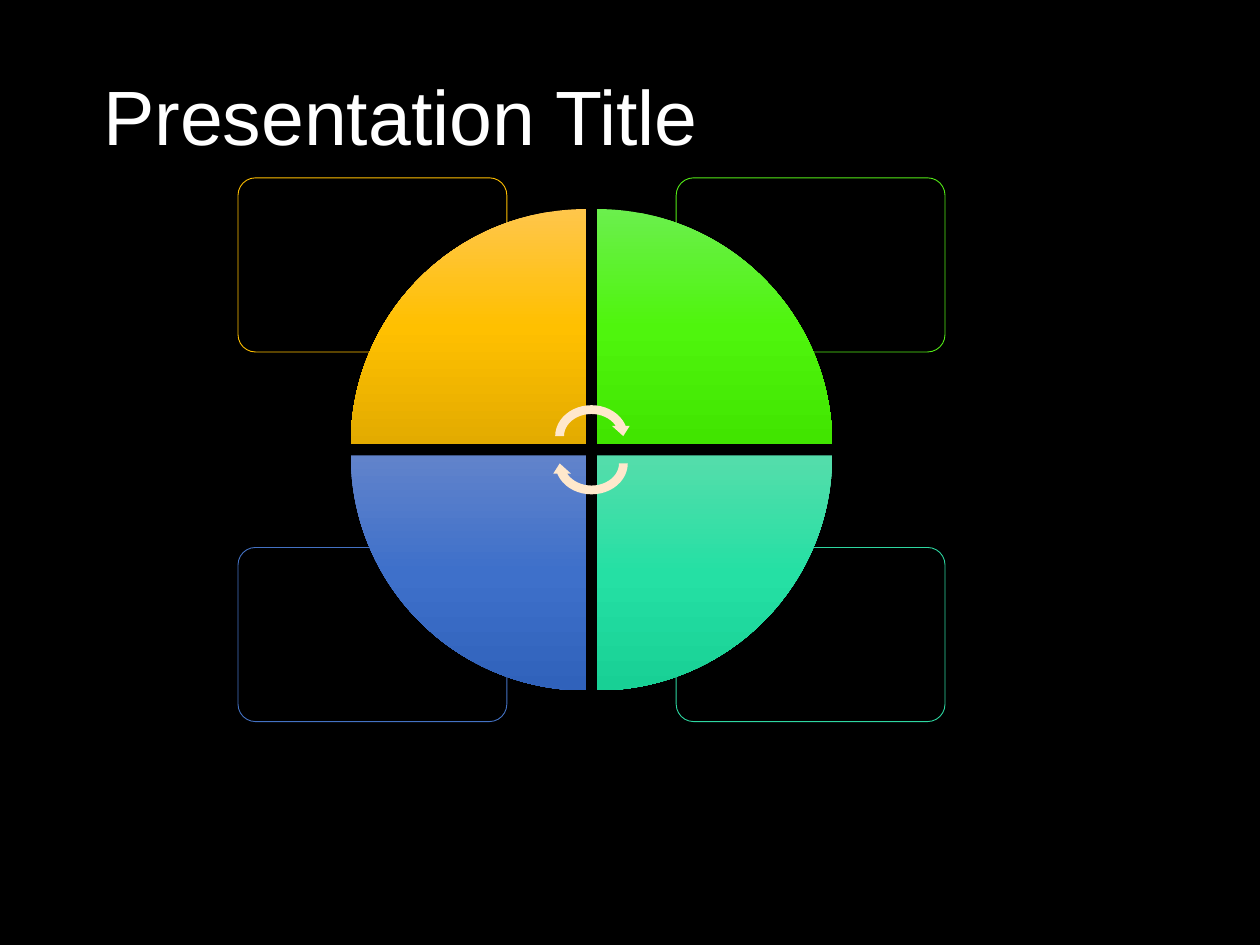
from copy import deepcopy

from lxml import etree
from pptx import Presentation
from pptx.dml.color import RGBColor
from pptx.enum.shapes import MSO_SHAPE
from pptx.enum.text import MSO_ANCHOR
from pptx.oxml.ns import qn
from pptx.util import Pt

ROUNDED = MSO_SHAPE.ROUNDED_RECTANGLE
WEDGE = MSO_SHAPE.PIE_WEDGE
CIRCULAR_ARROW = MSO_SHAPE.CIRCULAR_ARROW
MIDDLE = MSO_ANCHOR.MIDDLE


def color(hex_text):
    return RGBColor.from_string(hex_text)


def add_centered(kind, center_x, center_y, width, height, rotation=0):
    shape = page.shapes.add_shape(
        kind, Pt(center_x - width / 2), Pt(center_y - height / 2), Pt(width), Pt(height))
    shape.rotation = rotation
    shape.shadow.inherit = False
    shape.line.fill.background()
    return shape


deck = Presentation()
deck.slide_width, deck.slide_height = Pt(720), Pt(540)
page = deck.slides.add_slide(deck.slide_layouts[6])
page.background.fill.solid()
page.background.fill.fore_color.rgb = color("000000")

# Title
box = page.shapes.add_textbox(Pt(51.84), Pt(16.56), Pt(622.8), Pt(104.4))
box.text_frame.word_wrap = True
box.text_frame.vertical_anchor = MIDDLE
para = box.text_frame.paragraphs[0]
para.line_spacing = 0.9
span = para.add_run()
span.text = "Presentation Title"
span.font.name = "Arial"
span.font.size = Pt(44)
span.font.color.rgb = color("FFFFFF")

# Quadrants: side, level, rotation, outline, gradient from top to bottom
CENTER_X, CENTER_Y = 338, 257
quadrants = [
    (-1, -1, 0, "FFC000", ("FFC64B", "FFC000", "E3AB00")),
    (1, -1, 90, "53EB17", ("6BEF4D", "4FF50D", "41E500")),
    (1, 1, 180, "2ED7A1", ("55DDAB", "25E0A4", "18D095")),
    (-1, 1, 270, "4472C4", ("6183CB", "3E70CA", "3062BB")),
]

# Outlined cards behind the circle
for side, level, rotation, outline, shades in quadrants:
    card = add_centered(ROUNDED, CENTER_X + side * 125.2, CENTER_Y + level * 105.6, 153.6, 99.5)
    card.adjustments[0] = 0.1
    card.fill.solid()
    card.fill.fore_color.rgb = color("000000")
    fill_color = card.fill._xPr.find(qn("a:solidFill"))[0]
    etree.SubElement(fill_color, qn("a:alpha"), val="90000")
    card.line.color.rgb = color(outline)
    card.line.width = Pt(0.5)

# Four wedges forming the circle
WEDGE_SIZE, GAP = 134.4, 6.3
offset = (WEDGE_SIZE + GAP) / 2
for side, level, rotation, outline, shades in quadrants:
    wedge = add_centered(WEDGE, CENTER_X + side * offset, CENTER_Y + level * offset,
                         WEDGE_SIZE, WEDGE_SIZE, rotation)
    wedge.fill.gradient()
    wedge.fill.gradient_angle = 270
    gradient = wedge._element.spPr.find(qn("a:gradFill"))
    gradient.set("rotWithShape", "0")
    stops = gradient.find(qn("a:gsLst"))
    stops.insert(1, deepcopy(stops[0]))
    for stop, position, shade in zip(wedge.fill.gradient_stops, (0, 0.5, 1), shades):
        stop.position = position
        stop.color.rgb = color(shade)

# Turning arrows at the center
for level, rotation in ((-1, 0), (1, 180)):
    arrow = add_centered(CIRCULAR_ARROW, CENTER_X, CENTER_Y + level * 7.8, 46.5, 40.4, rotation)
    arrow.fill.solid()
    arrow.fill.fore_color.rgb = color("FFE8CC")

deck.save("out.pptx")
